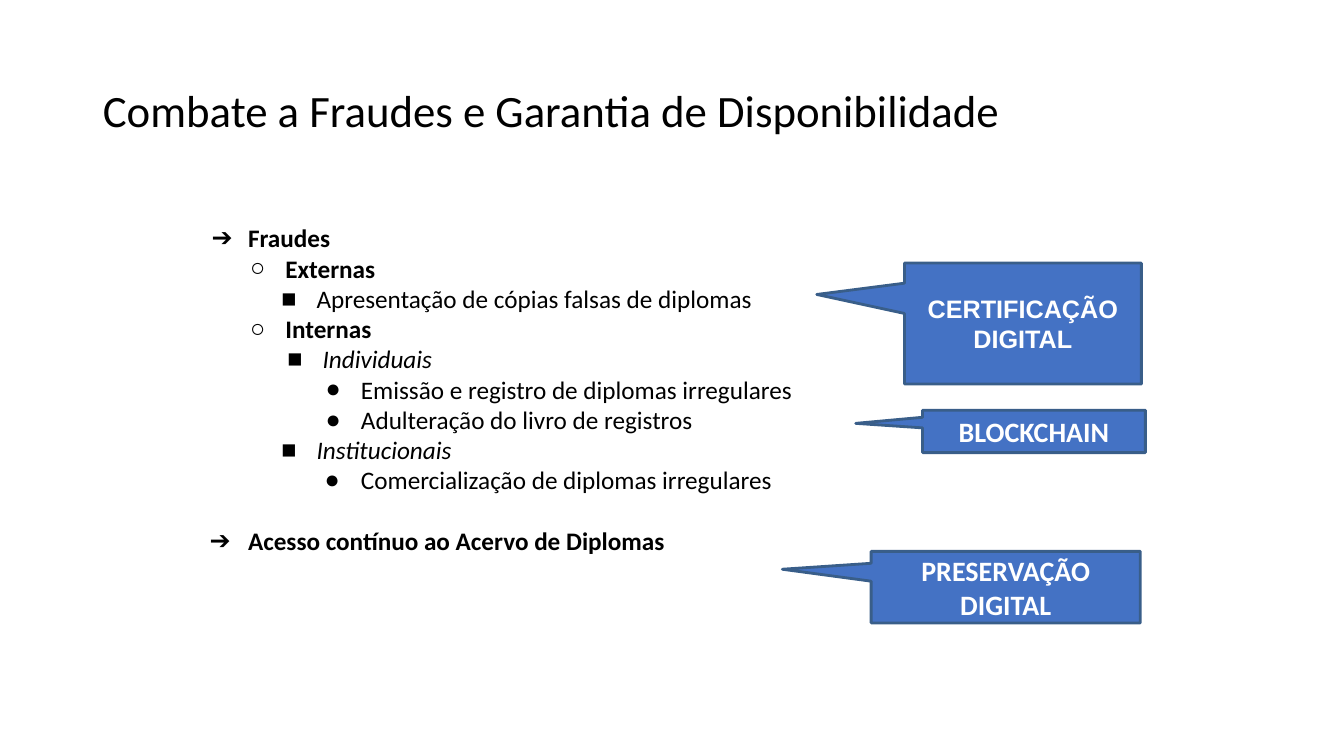
"""Build the slide on fighting diploma fraud and keeping records available."""
from dataclasses import dataclass

from lxml import etree
from pptx import Presentation
from pptx import util as u
from pptx.dml.color import RGBColor
from pptx.enum import shapes, text
from pptx.oxml.ns import qn

BLACK = RGBColor(0x00, 0x00, 0x00)
WHITE = RGBColor(0xFF, 0xFF, 0xFF)
CALLOUT_FILL = RGBColor(0x44, 0x72, 0xC4)
CALLOUT_LINE = RGBColor(0x39, 0x5E, 0x89)
BULLETS = ("➔", "○", "■", "●")


@dataclass
class Item:
    words: str
    level: int
    margin: float
    hanging: float = 0.35
    bold: bool = False
    italic: bool = False
    gap_before: float = 0


@dataclass
class Callout:
    words: str
    left: float
    top: float
    width: float
    height: float
    tip_x: float
    tip_y: float
    size: float = 20
    font: str = "Calibri"


ITEMS = (
    Item("Fraudes", 0, 0.38, 0.36, bold=True),
    Item("Externas", 1, 0.75, bold=True),
    Item("Apresentação de cópias falsas de diplomas", 2, 1.06),
    Item("Internas", 1, 0.75, bold=True),
    Item("Individuais", 2, 1.12, italic=True),
    Item("Emissão e registro de diplomas irregulares", 3, 1.5),
    Item("Adulteração do livro de registros", 3, 1.5),
    Item("Institucionais", 2, 1.06, italic=True),
    Item("Comercialização de diplomas irregulares", 3, 1.5, 0.36),
    Item("Acesso contínuo ao Acervo de Diplomas", 0, 0.38, 0.38, bold=True, gap_before=22),
)

CALLOUTS = (
    Callout("BLOCKCHAIN", 9.15, 4.07, 2.21, 0.42, -0.8, -0.19),
    Callout("PRESERVAÇÃO DIGITAL", 8.64, 5.47, 2.67, 0.71, -0.83, -0.25),
    Callout("CERTIFICAÇÃO DIGITAL", 8.97, 2.61, 2.35, 1.2, -0.87, -0.24, 18, "Arial"),
)


def place(shape, left: float, top: float, width: float, height: float) -> None:
    """Move and size a shape in inches."""
    shape.left, shape.top = u.Inches(left), u.Inches(top)
    shape.width, shape.height = u.Inches(width), u.Inches(height)


def format_runs(paragraph, size: float, color: RGBColor, font: str = "Calibri",
                bold: bool = False, italic: bool = False) -> None:
    """Give every run of a paragraph the same look."""
    for run in paragraph.runs:
        run.font.name, run.font.size = font, u.Pt(size)
        run.font.bold, run.font.italic = bold, italic
        run.font.color.rgb = color


def set_bullet(paragraph, item: Item) -> None:
    """Set the indents and bullet character of a list item."""
    properties = paragraph._p.get_or_add_pPr()
    properties.set("marL", str(u.Inches(item.margin)))
    properties.set("indent", str(-u.Inches(item.hanging)))
    etree.SubElement(properties, qn("a:buFont")).set("typeface", "Arial")
    etree.SubElement(properties, qn("a:buChar")).set("char", BULLETS[item.level])


def fill_title(title) -> None:
    """Write the slide title."""
    place(title, 0.92, 0.4, 11.5, 1.45)
    title.text_frame.text = "Combate a Fraudes e Garantia de Disponibilidade"
    title.text_frame.vertical_anchor = text.MSO_ANCHOR.MIDDLE
    paragraph = title.text_frame.paragraphs[0]
    paragraph.alignment = text.PP_ALIGN.LEFT
    paragraph.line_spacing = 0.9
    format_runs(paragraph, 32, BLACK)


def fill_list(body) -> None:
    """Write the outline of fraud types."""
    place(body, 1.98, 2.16, 8.82, 4.14)
    frame = body.text_frame
    frame.auto_size = text.MSO_AUTO_SIZE.NONE
    frame.text = "\n".join(item.words for item in ITEMS)
    for paragraph, item in zip(frame.paragraphs, ITEMS):
        paragraph.level = item.level
        paragraph.space_before = u.Pt(item.gap_before)
        set_bullet(paragraph, item)
        format_runs(paragraph, 18, BLACK, bold=item.bold, italic=item.italic)


def add_callout(slide, callout: Callout) -> None:
    """Draw one callout pointing at the list."""
    shape = slide.shapes.add_shape(
        shapes.MSO_SHAPE.RECTANGULAR_CALLOUT,
        u.Inches(callout.left), u.Inches(callout.top),
        u.Inches(callout.width), u.Inches(callout.height))
    shape.adjustments[0], shape.adjustments[1] = callout.tip_x, callout.tip_y
    shape.shadow.inherit = False
    shape.fill.solid()
    shape.fill.fore_color.rgb = CALLOUT_FILL
    shape.line.color.rgb = CALLOUT_LINE
    shape.line.width = u.Pt(2)
    frame = shape.text_frame
    frame.text = callout.words
    frame.word_wrap = True
    frame.vertical_anchor = text.MSO_ANCHOR.MIDDLE
    paragraph = frame.paragraphs[0]
    paragraph.alignment = text.PP_ALIGN.CENTER
    format_runs(paragraph, callout.size, WHITE, callout.font, bold=True)


def main() -> None:
    """Build and save the presentation."""
    presentation = Presentation()
    presentation.slide_width = u.Inches(13.33)
    presentation.slide_height = u.Inches(7.5)
    slide = presentation.slides.add_slide(presentation.slide_layouts[1])
    fill_title(slide.shapes.title)
    fill_list(slide.placeholders[1])
    for callout in CALLOUTS:
        add_callout(slide, callout)
    presentation.save("out.pptx")


if __name__ == "__main__":
    main()
